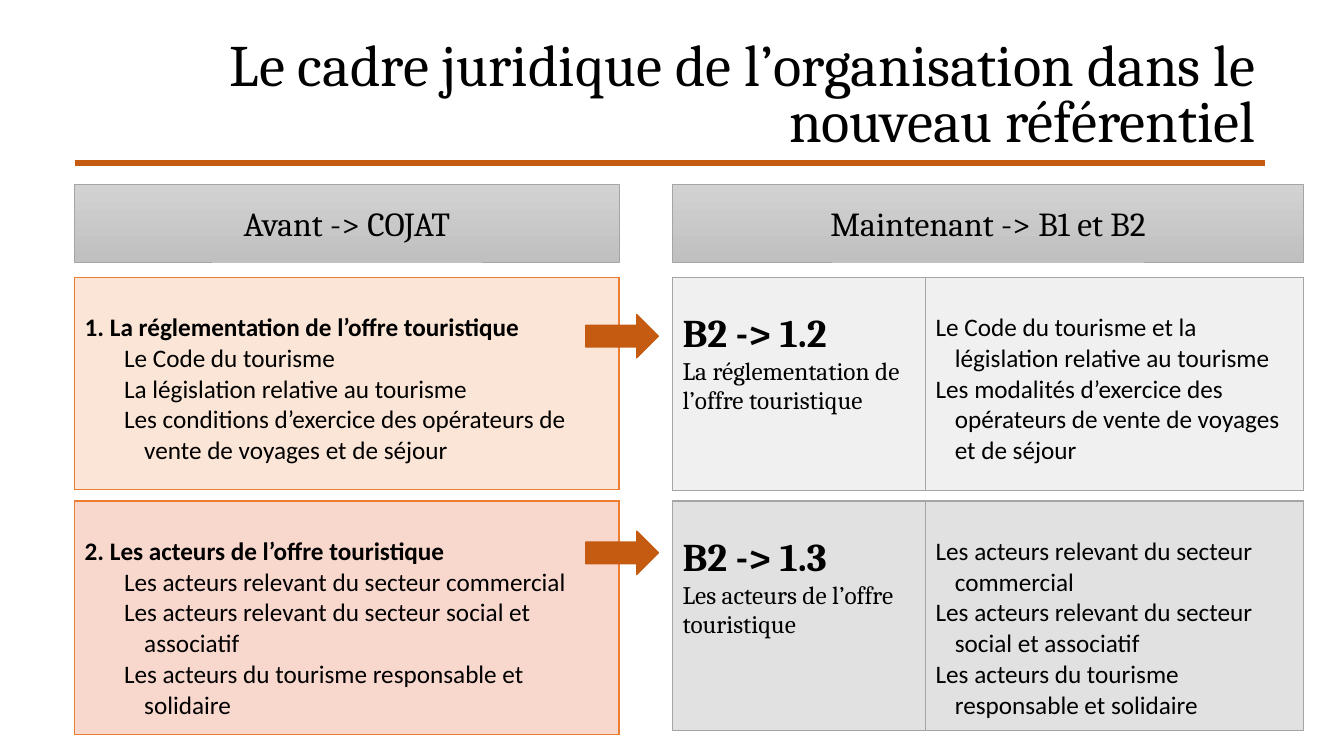
import dataclasses

import pptx
import pptx.dml.color
import pptx.enum.dml
import pptx.enum.shapes
import pptx.enum.text
import pptx.oxml
import pptx.oxml.ns
import pptx.util
from pptx.util import Inches, Pt

ALIGN = pptx.enum.text.PP_ALIGN
ANCHOR = pptx.enum.text.MSO_ANCHOR
SHAPE = pptx.enum.shapes.MSO_SHAPE
NS = pptx.oxml.ns.nsdecls("a")


@dataclasses.dataclass(frozen=True)
class Theme:
    serif: str = "Cambria"
    sans: str = "Calibri"
    ink: str = "000000"
    rust: str = "C55A11"
    orange: str = "ED7D31"
    grey: str = "A5A5A5"
    light: str = "D2D2D2"
    dark: str = "C0C0C0"
    title: float = 41.9
    code: int = 28
    label: int = 24
    body: int = 18


THEME = Theme()
LEFT, RIGHT = 0.74, 6.67
WIDE_L, COLS_R = 5.4, (2.51, 3.75)

# top, then (height, fill) of the left and right tables, then the texts
ROWS = [
    (2.75, (2.11, "FBE5D6"), (2.12, "F0F0F0"),
     "1. La réglementation de l’offre touristique",
     ["Le Code du tourisme",
      "La législation relative au tourisme",
      "Les conditions d’exercice des opérateurs de vente de voyages et de séjour"],
     "B2 -> 1.2", "La réglementation de l’offre touristique",
     ["Le Code du tourisme et la législation relative au tourisme",
      "Les modalités d’exercice des opérateurs de vente de voyages et de séjour"],
     3.12),
    (4.97, (2.32, "F8D7CD"), (2.28, "E1E1E1"),
     "2. Les acteurs de l’offre touristique",
     ["Les acteurs relevant du secteur commercial",
      "Les acteurs relevant du secteur social et associatif",
      "Les acteurs du tourisme responsable et solidaire"],
     "B2 -> 1.3", "Les acteurs de l’offre touristique",
     ["Les acteurs relevant du secteur commercial",
      "Les acteurs relevant du secteur social et associatif",
      "Les acteurs du tourisme responsable et solidaire"],
     5.27),
]


def rgb(hue):
    return pptx.dml.color.RGBColor.from_string(hue)


def style(para, face, size, bold=False):
    font = para.font
    font.name, font.size, font.bold = face, Pt(size), bold
    font.color.rgb = rgb(THEME.ink)


def add_title(slide, text):
    title = slide.shapes.title
    title.left, title.top = Inches(LEFT), Inches(0.32)
    title.width, title.height = Inches(11.81), Inches(1.3)
    frame = title.text_frame
    frame.text = text
    frame.word_wrap = True
    frame.auto_size = pptx.enum.text.MSO_AUTO_SIZE.NONE
    frame.vertical_anchor = ANCHOR.MIDDLE
    para = frame.paragraphs[0]
    para.alignment, para.line_spacing = ALIGN.RIGHT, 0.8
    style(para, THEME.serif, THEME.title)


def add_rule(slide, y):
    line = slide.shapes.add_connector(
        pptx.enum.shapes.MSO_CONNECTOR.STRAIGHT,
        Inches(LEFT), Inches(y), Inches(12.55), Inches(y))
    line.line.color.rgb = rgb(THEME.rust)
    line.line.width = Pt(4.5)
    props = line._element.spPr
    props.append(pptx.oxml.parse_xml(f"<a:effectLst {NS}/>"))


def add_head(slide, x, width, text):
    box = slide.shapes.add_shape(
        SHAPE.RECTANGLE, Inches(x), Inches(1.83), Inches(width), Inches(0.77))
    box.shadow.inherit = False
    box.fill.gradient()
    box.fill.gradient_angle = 270
    for stop, hue in zip(box.fill.gradient_stops, (THEME.light, THEME.dark)):
        stop.color.rgb = rgb(hue)
    box.line.color.rgb = rgb(THEME.grey)
    box.line.width = Pt(0.5)
    frame = box.text_frame
    frame.text = text
    frame.word_wrap = True
    frame.vertical_anchor = ANCHOR.MIDDLE
    para = frame.paragraphs[0]
    para.alignment = ALIGN.CENTER
    style(para, THEME.serif, THEME.label)


def add_arrow(slide, y):
    arrow = slide.shapes.add_shape(
        SHAPE.RIGHT_ARROW, Inches(5.81), Inches(y), Inches(0.72), Inches(0.43))
    arrow.shadow.inherit = False
    arrow.fill.solid()
    arrow.fill.fore_color.rgb = rgb(THEME.rust)
    arrow.line.color.rgb = rgb(THEME.rust)
    arrow.line.width = Pt(1)


def add_grid(slide, x, y, cols, height, fill, edge):
    """Add a one-row table and return its cells."""
    table = slide.shapes.add_table(
        1, len(cols), Inches(x), Inches(y),
        Inches(sum(cols)), Inches(height)).table
    table.first_row = table.horz_banding = False
    table.rows[0].height = Inches(height)
    for col, width in zip(table.columns, cols):
        col.width = Inches(width)
    cells = list(table.rows[0].cells)
    for cell in cells:
        cell.margin_top = Inches(0.35)
        props = cell._tc.get_or_add_tcPr()
        for side in "LRTB":
            props.append(pptx.oxml.parse_xml(
                f'<a:ln{side} {NS} w="{Pt(1)}"><a:solidFill>'
                f'<a:srgbClr val="{edge}"/></a:solidFill></a:ln{side}>'))
        cell.fill.solid()
        cell.fill.fore_color.rgb = rgb(fill)
    return cells


def write(cell, lines):
    """Fill a cell with (text, face, size, bold, margin, hang) lines."""
    frame = cell.text_frame
    frame.text = "\n".join(line[0] for line in lines)
    for para, (_, face, size, bold, margin, hang) in zip(frame.paragraphs, lines):
        style(para, face, size, bold)
        if margin:
            props = para._p.get_or_add_pPr()
            props.set("marL", str(Inches(margin)))
            props.set("indent", str(-Inches(hang)))


def items(texts, margin, hang):
    return [(text, THEME.sans, THEME.body, False, margin, hang) for text in texts]


def add_row(slide, top, old, new, head, before, code, name, after, arrow):
    cell, = add_grid(slide, LEFT, top, (WIDE_L,), *old, THEME.orange)
    write(cell, [(head, THEME.sans, THEME.body, True, 0, 0)]
          + items(before, 0.59, 0.2))
    ref, list_ = add_grid(slide, RIGHT, top, COLS_R, *new, THEME.grey)
    write(ref, [(code, THEME.serif, THEME.code, True, 0, 0),
                (name, THEME.serif, THEME.body, False, 0, 0)])
    write(list_, items(after, 0.19, 0.19))
    add_arrow(slide, arrow)


def main():
    deck = pptx.Presentation()
    deck.slide_width, deck.slide_height = Inches(13.33), Inches(7.5)
    slide = deck.slides.add_slide(deck.slide_layouts[5])
    add_title(slide, "Le cadre juridique de l’organisation dans le nouveau référentiel")
    add_rule(slide, 1.62)
    add_head(slide, LEFT, WIDE_L, "Avant -> COJAT")
    add_head(slide, RIGHT, sum(COLS_R), "Maintenant -> B1 et B2")
    for row in ROWS:
        add_row(slide, *row)
    deck.save("out.pptx")


if __name__ == "__main__":
    main()
